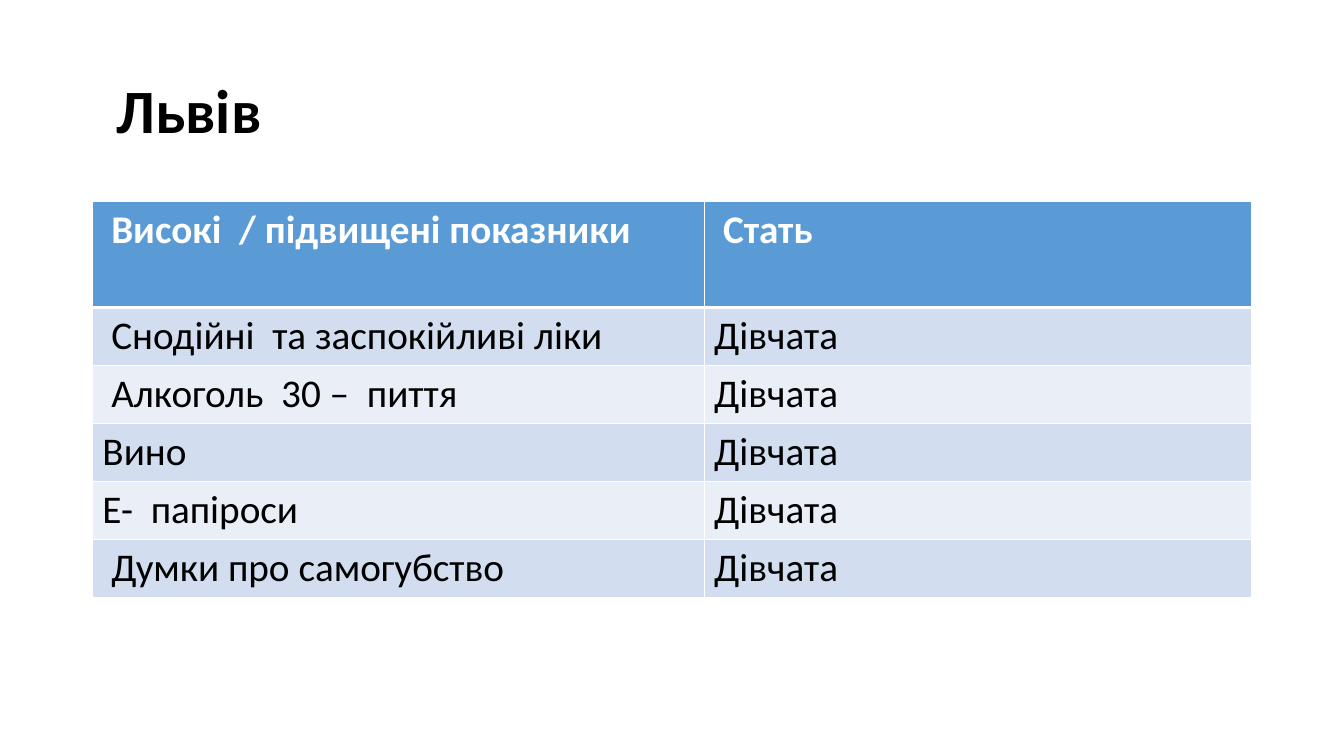
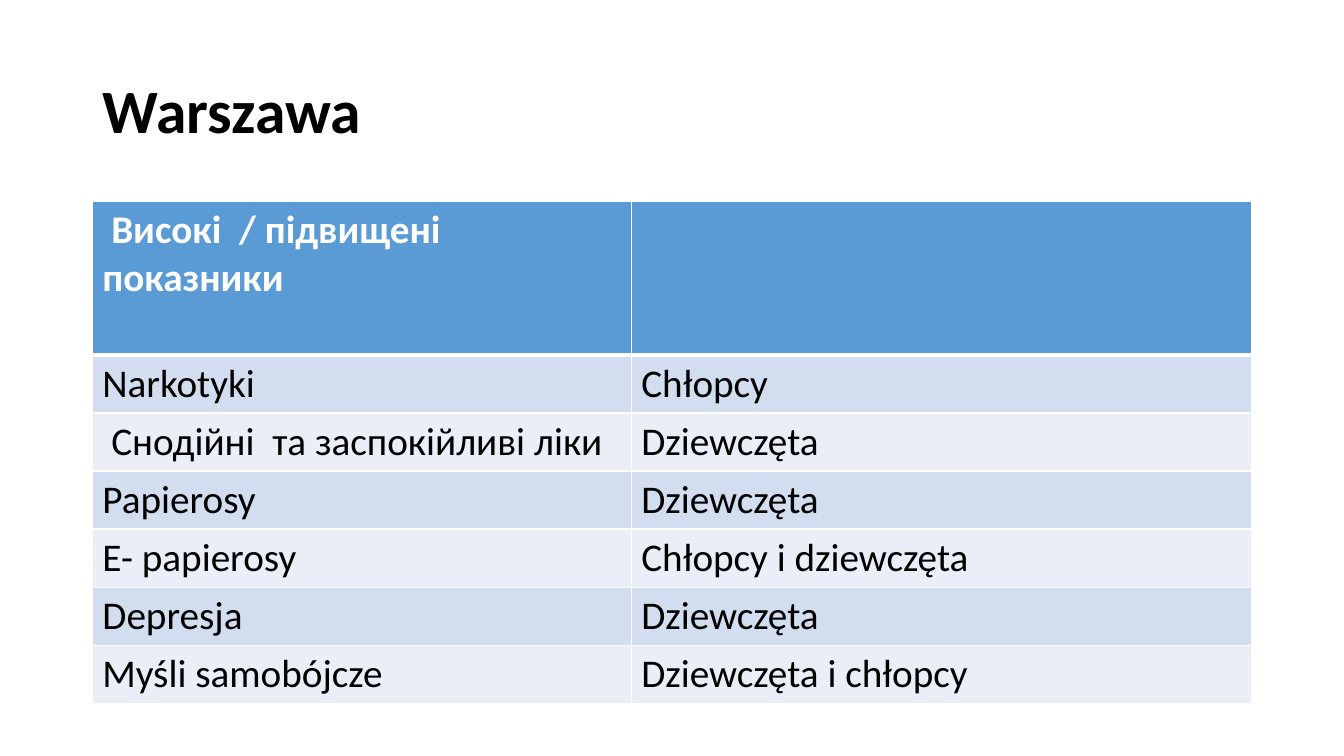
from dataclasses import dataclass

from lxml import etree
from pptx import Presentation
from pptx import util as u
from pptx.dml.color import RGBColor
from pptx.enum import text
from pptx.oxml import ns


@dataclass(frozen=True)
class Theme:
    font: str = "Calibri"
    ink: str = "000000"
    paper: str = "FFFFFF"
    header: str = "5B9BD5"
    bands: tuple = ("D2DEEF", "EAEFF7")
    title_size: int = 44
    table_size: int = 28
    thin: int = 1
    thick: int = 3


class Deck:
    LEFT, WIDTH = 66, 828
    TITLE_TOP, TITLE_HEIGHT = 28.8, 104.4
    TABLE_TOP, ROW_HEIGHT = 144, 41.4

    def __init__(self, theme):
        self.theme = theme
        self.deck = Presentation()
        self.deck.slide_width, self.deck.slide_height = u.Pt(960), u.Pt(540)
        self.page = None

    def add_page(self, title):
        layout = self.deck.slide_layouts.get_by_name("Title Only")
        self.page = self.deck.slides.add_slide(layout)
        box = self.page.shapes.title
        box.left, box.top = u.Pt(self.LEFT), u.Pt(self.TITLE_TOP)
        box.width, box.height = u.Pt(self.WIDTH), u.Pt(self.TITLE_HEIGHT)
        frame = box.text_frame
        frame.auto_size = text.MSO_AUTO_SIZE.NONE
        frame.vertical_anchor = text.MSO_ANCHOR.MIDDLE
        para = frame.paragraphs[0]
        para.line_spacing = 0.9
        self.add_span(para, title, self.theme.title_size, self.theme.ink, True)

    def add_span(self, para, words, size, color, bold):
        para.alignment = text.PP_ALIGN.LEFT
        span = para.add_run()
        span.text = words
        span.font.name = self.theme.font
        span.font.size = u.Pt(size)
        span.font.bold = bold
        span.font.color.rgb = RGBColor.from_string(color)

    def add_borders(self, cell, top, bottom):
        """Draw the four edges of a cell; widths are in points."""
        properties = cell._tc.get_or_add_tcPr()
        widths = {"L": self.theme.thin, "R": self.theme.thin, "T": top, "B": bottom}
        for side, width in widths.items():
            line = etree.SubElement(properties, ns.qn(f"a:ln{side}"), w=str(u.Pt(width)))
            fill = etree.SubElement(line, ns.qn("a:solidFill"))
            etree.SubElement(fill, ns.qn("a:srgbClr"), val=self.theme.paper)

    def add_table(self, rows, first_width, header_height):
        theme = self.theme
        height = header_height + self.ROW_HEIGHT * (len(rows) - 1)
        frame = self.page.shapes.add_table(
            len(rows), 2, u.Pt(self.LEFT), u.Pt(self.TABLE_TOP),
            u.Pt(self.WIDTH), u.Pt(height))
        table = frame.table
        for column, width in zip(table.columns, (first_width, self.WIDTH - first_width)):
            column.width = u.Pt(width)
        for index, row in enumerate(rows):
            is_header = index == 0
            table.rows[index].height = u.Pt(header_height if is_header else self.ROW_HEIGHT)
            color = theme.header if is_header else theme.bands[(index - 1) % 2]
            for cell, words in zip(table.rows[index].cells, row):
                self.add_borders(cell, theme.thick if index == 1 else theme.thin,
                                 theme.thick if is_header else theme.thin)
                cell.fill.solid()
                cell.fill.fore_color.rgb = RGBColor.from_string(color)
                if words:
                    self.add_span(cell.text_frame.paragraphs[0], words, theme.table_size,
                                  theme.paper if is_header else theme.ink, is_header)


INDICATORS = " Високі  / підвищені показники"
SEDATIVES = " Снодійні  та заспокійливі ліки"

LVIV = [(INDICATORS, " Стать")] + [
    (indicator, "Дівчата") for indicator in (
        SEDATIVES, " Алкоголь  30 –  пиття", "Вино",
        "E-  папіроси", " Думки про самогубство")]

WARSAW = [
    (INDICATORS, ""),
    ("Narkotyki", "Chłopcy"),
    (SEDATIVES, "Dziewczęta"),
    ("Papierosy", "Dziewczęta"),
    ("E- papierosy", "Chłopcy i dziewczęta"),
    ("Depresja", "Dziewczęta"),
    ("Myśli samobójcze", "Dziewczęta i chłopcy"),
]


def main():
    slides = Deck(Theme())
    slides.add_page(" Львів")
    slides.add_table(LVIV, first_width=437, header_height=75.6)
    slides.add_page("Warszawa")
    slides.add_table(WARSAW, first_width=385, header_height=109.6)
    slides.deck.save("out.pptx")


if __name__ == "__main__":
    main()
